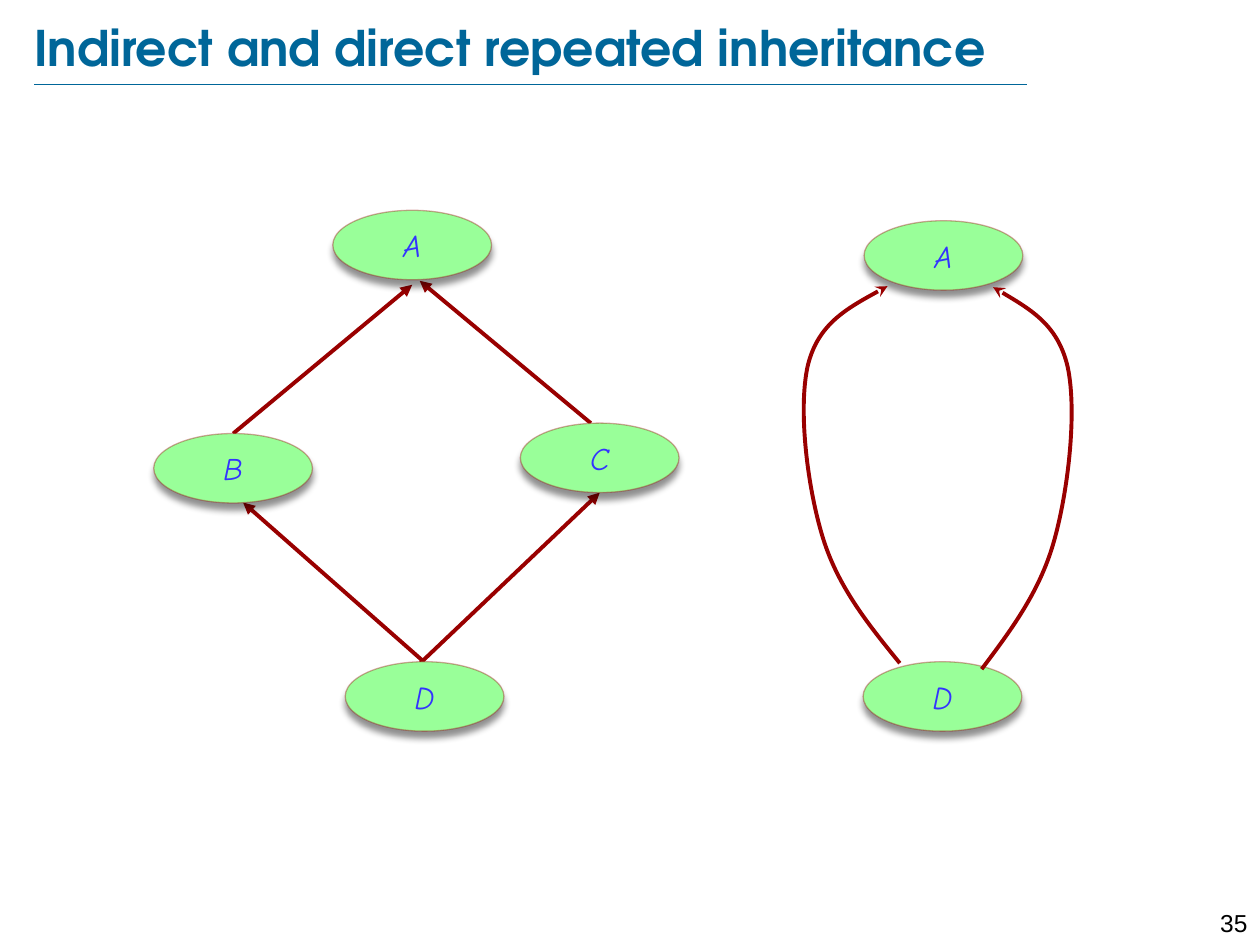
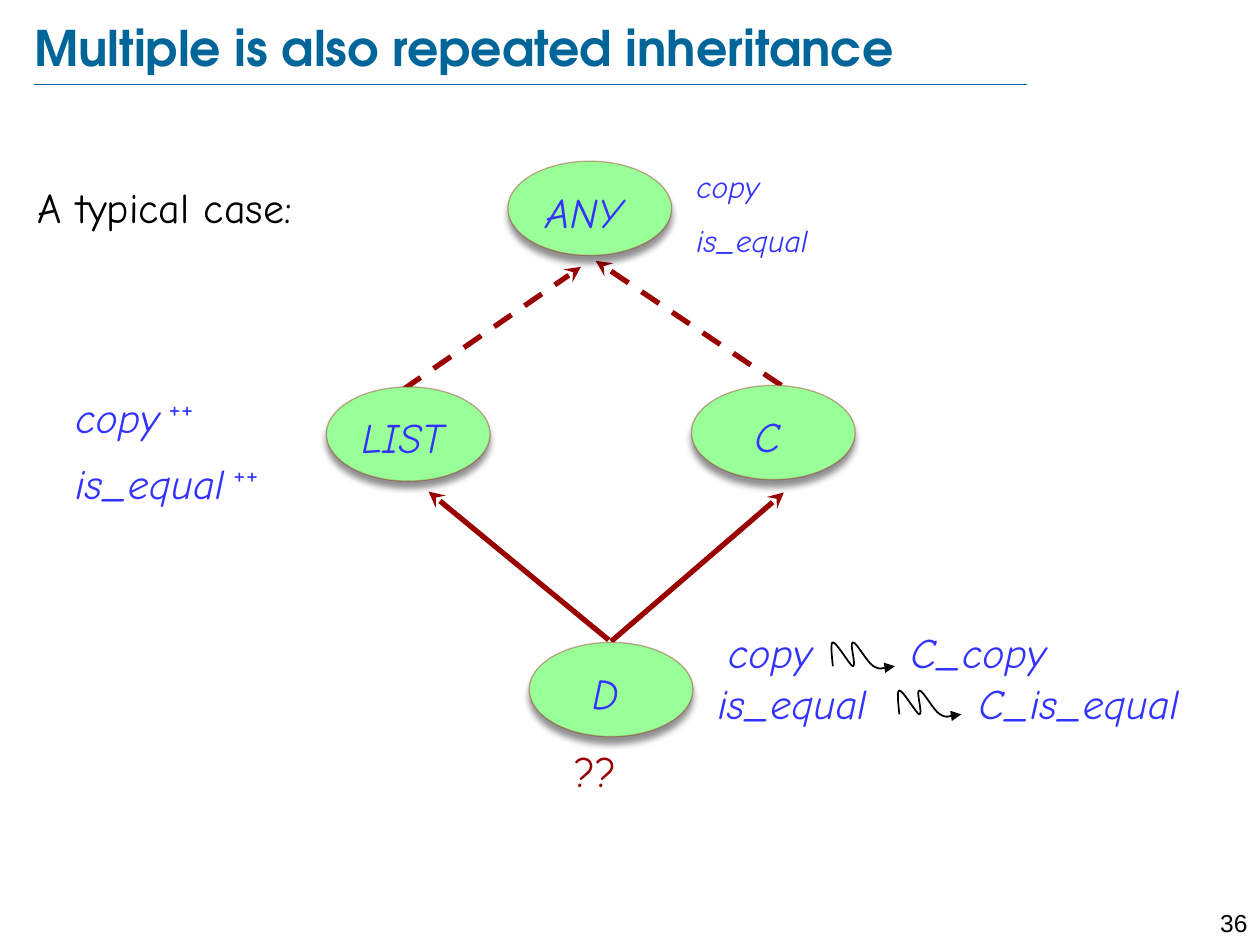
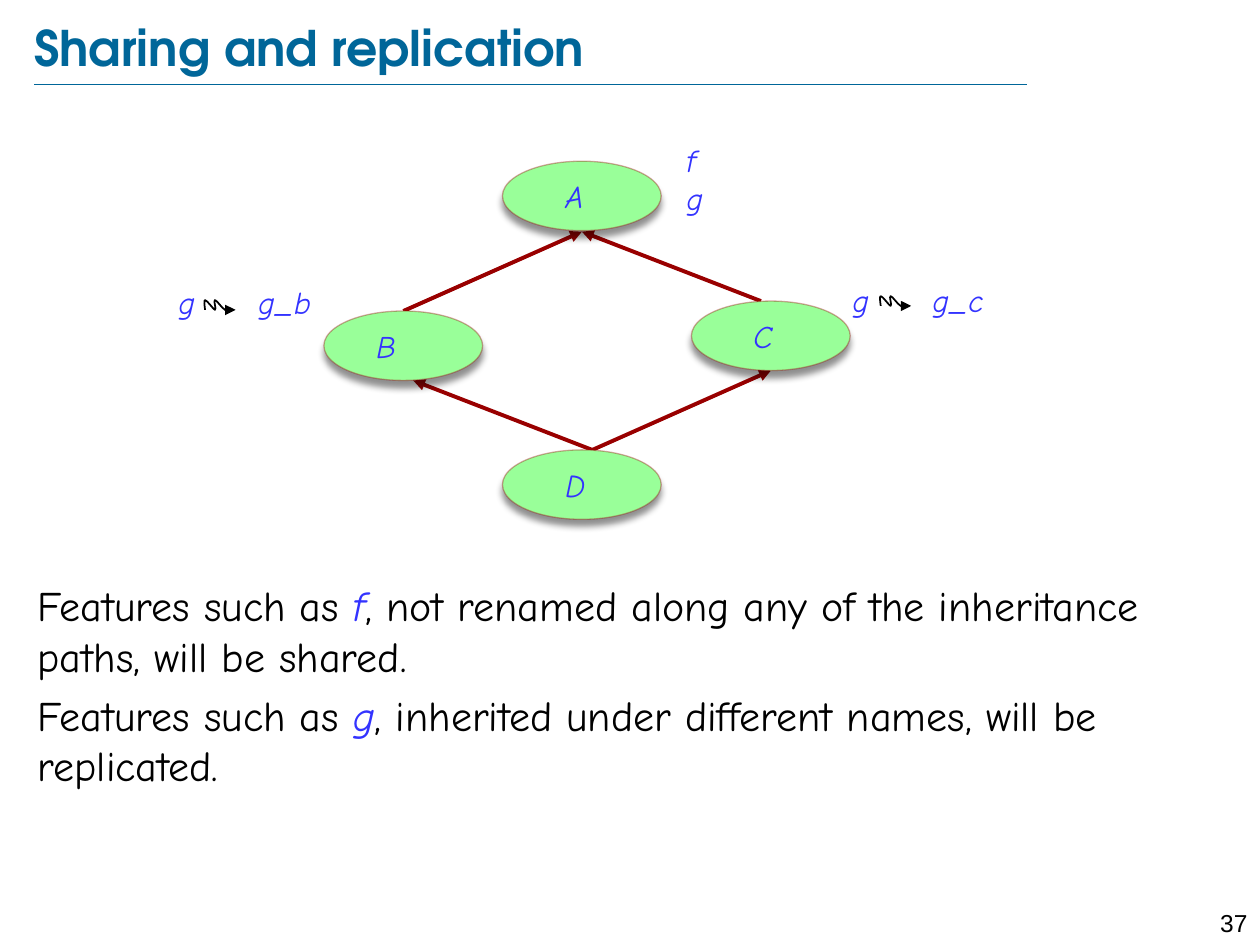
from lxml import etree
from pptx import Presentation
from pptx.dml.color import RGBColor
from pptx.enum.dml import MSO_LINE
from pptx.enum.shapes import MSO_CONNECTOR, MSO_SHAPE
from pptx.enum.text import MSO_ANCHOR, MSO_AUTO_SIZE, PP_ALIGN
from pptx.oxml import parse_xml
from pptx.oxml.ns import nsdecls, qn
from pptx.util import Cm, Pt

OVAL, STRAIGHT, DASH = MSO_SHAPE.OVAL, MSO_CONNECTOR.STRAIGHT, MSO_LINE.DASH
LEFT, CENTER, RIGHT = PP_ALIGN.LEFT, PP_ALIGN.CENTER, PP_ALIGN.RIGHT
TOP, MIDDLE = MSO_ANCHOR.TOP, MSO_ANCHOR.MIDDLE

# Shared look
TEAL, GREEN, RED, BLUE, BLACK = "006699", "99FF99", "990000", "3333FF", "000000"
TITLE_FONT, BODY_FONT, NUMBER_FONT = "TeX Gyre Adventor", "Comic Neue", "Arial"
FEATURE = dict(color=BLUE, italic=True)
SMALL_FEATURE = dict(size=18, **FEATURE)
FIRST_NUMBER = 35

# Curves in a unit box: a start point, then three points for each Bezier piece
BOW = [(1, 1), (.7, .9), (.4, .8), (.25, .67), (.1, .54), (0, .33), (.1, .21),
       (.2, .1), (.54, .05), (.88, 0)]
SQUIGGLE = [(.04, .86), (.02, .43), (0, 0), (.04, 0), (.1, 0), (.31, .86), (.35, .86),
            (.41, .86), (.29, 0), (.35, 0), (.41, 0), (.57, .73), (.67, .86),
            (.78, 1), (.94, .86), (1, .86)]
BOW_LINE = dict(color=RED, width=2.25, head="stealth")
RENAME_LINE = dict(color=BLACK, width=1, head="triangle")

# Content, in centimetres
# nodes: name, left, top, label offset; arrows: start, end; curves: points, box, flip, line
# texts: box, paragraphs (a string or a list of (text, format)), format
THICK = dict(width=3, head="stealth")
DASHED = dict(dash=DASH, **THICK)
THIN = dict(width=2.25, head="triangle")
SUPER = dict(size=28, italic=False, baseline=30)

SLIDES = [
    dict(
        title="Indirect and direct repeated inheritance", title_width=23.83,
        node_size=(3.2, 1.4),
        nodes=[("A", 6.71, 4.24, 0), ("D", 6.96, 13.34, 0), ("B", 3.1, 8.74, 0),
               ("C", 10.49, 8.53, 0), ("A", 17.42, 4.45, 0), ("D", 17.4, 13.34, 0)],
        arrows=[((4.7, 8.74), (8.31, 5.74), THIN), ((11.91, 8.53), (8.46, 5.66), THIN),
                ((8.48, 13.36), (12.09, 9.93), THIN), ((8.51, 13.31), (4.9, 10.13), THIN)],
        curves=[(BOW, (16.08, 5.77, 2.06, 7.6), False, BOW_LINE),
                (BOW, (19.79, 5.79, 1.93, 7.7), True, BOW_LINE)],
        texts=[],
    ),
    dict(
        title="Multiple is also repeated inheritance", title_width=23.6,
        node_size=(3.3, 1.9),
        label=dict(dy=.38, size=(4.47, 1.27), format=dict(align=CENTER, **FEATURE)),
        nodes=[("C", 13.94, 7.77, -.7), ("LIST", 6.58, 7.8, -.7),
               ("D", 10.67, 12.95, -.7), ("ANY", 10.24, 3.25, -.7)],
        arrows=[((8.13, 7.85), (11.71, 5.38), DASHED), ((15.75, 7.77), (12.01, 5.26), DASHED),
                ((12.32, 12.93), (15.8, 9.93), THICK), ((12.27, 12.9), (8.64, 9.91), THICK)],
        curves=[(SQUIGGLE, (16.74, 12.95, 1.3, .56), False, RENAME_LINE),
                (SQUIGGLE, (18.08, 13.92, 1.3, .56), False, RENAME_LINE)],
        texts=[
            ((.51, 3.53, 7.06, 2.16), ["A typical case:"], {}),
            ((1.27, 7.95, 5.03, 2.24),
             [[(name, {}), (" ", dict(size=16)), ("++", SUPER)] for name in ("copy", "is_equal")],
             dict(line_spacing=.7, gap=14, **FEATURE)),
            ((13.79, 3.25, 4.19, 2.16), ["copy", "is_equal"], dict(gap=9, **SMALL_FEATURE)),
            ((11.33, 14.91, 4.19, 1.27), ["??"], dict(color=RED)),
            ((14.43, 12.5, 9.04, 1.27), ["copy\tC_copy"], dict(tab=3.68, **FEATURE)),
            ((14.22, 13.54, 10.29, 1.27), ["is_equal\tC_is_equal"], dict(tab=5.26, **FEATURE)),
        ],
    ),
    dict(
        title="Sharing and replication", title_width=22.07,
        node_size=(3.2, 1.4),
        label=dict(dy=.2, size=(1.4, 1.02), format=SMALL_FEATURE),
        nodes=[("A", 10.13, 3.25, 1.02), ("D", 10.13, 9.07, 1.02),
               ("B", 6.53, 6.27, .81), ("C", 13.94, 6.07, 1)],
        arrows=[((8.13, 6.27), (11.73, 4.67), THIN), ((15.34, 6.07), (11.73, 4.67), THIN),
                ((11.94, 9.07), (15.54, 7.47), THIN), ((11.94, 9.07), (8.33, 7.67), THIN)],
        curves=[(SQUIGGLE, (4.11, 6.05, .64, .23), False, RENAME_LINE),
                (SQUIGGLE, (17.73, 5.97, .64, .23), False, RENAME_LINE)],
        texts=[
            ((.51, 11.56, 24.21, 6.17),
             [[("Features such as ", {}), ("f", FEATURE),
               (", not renamed along any of the inheritance paths, will be shared.", {})],
              [("Features such as ", {}), ("g", FEATURE),
               (", inherited under different names, will be replicated.", {})]],
             dict(gap=5)),
            ((13.59, 2.72, 4.19, 1.8), ["f", "g"], SMALL_FEATURE),
            ((3.35, 5.59, 3.23, 1.02), ["g\tg_b"], dict(tab=1.61, **SMALL_FEATURE)),
            ((16.94, 5.54, 3.23, 1.02), ["g\tg_c"], dict(tab=1.61, **SMALL_FEATURE)),
        ],
    ),
]


def rgb(color):
    return RGBColor.from_string(color)


def format_run(run, font=BODY_FONT, size=24, color=BLACK, bold=False, italic=False, baseline=0):
    run.font.name, run.font.size = font, Pt(size)
    run.font.bold, run.font.italic = bold, italic
    run.font.color.rgb = rgb(color)
    if baseline:
        run._r.get_or_add_rPr().set("baseline", str(baseline * 1000))


def write(frame, paragraphs, align=LEFT, anchor=TOP, wrap=True, gap=0, line_spacing=None,
          tab=None, **run_format):
    frame.auto_size = MSO_AUTO_SIZE.NONE
    frame.word_wrap, frame.vertical_anchor = wrap, anchor
    for index, runs in enumerate(paragraphs):
        paragraph = frame.add_paragraph() if index else frame.paragraphs[0]
        paragraph.alignment = align
        paragraph.space_before = Pt(gap if index else 0)
        if line_spacing:
            paragraph.line_spacing = line_spacing
        if tab:
            tabs = etree.SubElement(paragraph._p.get_or_add_pPr(), qn("a:tabLst"))
            etree.SubElement(tabs, qn("a:tab"), pos=str(Cm(tab)), algn="l")
        for text, changes in [(runs, {})] if isinstance(runs, str) else runs:
            run = paragraph.add_run()
            run.text = text
            format_run(run, **{**run_format, **changes})


def add_text(slide, box, paragraphs, **text_format):
    write(slide.shapes.add_textbox(*map(Cm, box)).text_frame, paragraphs, **text_format)


def style_line(shape, color=RED, width=1, head=None, dash=None):
    shape.line.color.rgb, shape.line.width = rgb(color), Pt(width)
    if dash:
        shape.line.dash_style = dash
    if head:
        etree.SubElement(shape.line._get_or_add_ln(), qn("a:tailEnd"), type=head)


def add_line(slide, start, end, **line_format):
    line = slide.shapes.add_connector(STRAIGHT, *map(Cm, start + end))
    style_line(line, **line_format)
    etree.SubElement(line._element.spPr, qn("a:effectLst"))


def add_curve(slide, unit_points, box, flip, line_format):
    left, top, width, height = box
    points = [(Cm(left + width * (1 - x if flip else x)), Cm(top + height * y))
              for x, y in unit_points]
    builder = slide.shapes.build_freeform(*points[0])
    builder.add_line_segments(points[1:], close=False)
    curve = builder.convert_to_shape()
    curve.shadow.inherit = False
    curve.fill.background()
    style_line(curve, **line_format)
    # Merge each three straight pieces into one Bezier piece
    outline = curve._element.find(".//" + qn("a:path"))
    pieces = outline.findall(qn("a:lnTo"))
    for first in range(0, len(pieces), 3):
        bezier = etree.SubElement(outline, qn("a:cubicBezTo"))
        for piece in pieces[first:first + 3]:
            bezier.append(piece[0])
            outline.remove(piece)


def add_node(slide, left, top, size):
    node = slide.shapes.add_shape(OVAL, *map(Cm, (left, top, *size)))
    node.fill.solid()
    node.fill.fore_color.rgb = rgb(GREEN)
    style_line(node, RED, .75)
    line_color = node.line._get_or_add_ln().find(".//" + qn("a:srgbClr"))
    etree.SubElement(line_color, qn("a:alpha"), val="34000")
    node._element.spPr.append(parse_xml(
        f'<a:effectLst {nsdecls("a")}><a:outerShdw blurRad="{Pt(4)}" dist="{Pt(4)}" '
        f'dir="5400000" rotWithShape="0"><a:srgbClr val="{BLACK}"><a:alpha val="43000"/>'
        '</a:srgbClr></a:outerShdw></a:effectLst>'))
    return node


def add_frame(slide, title, title_width, number):
    heading = slide.shapes.title
    heading.left, heading.top, heading.width, heading.height = map(Cm, (.69, .33, title_width, 1.22))
    frame = heading.text_frame
    frame.margin_left = frame.margin_right = frame.margin_top = frame.margin_bottom = 0
    write(frame, [title], anchor=MIDDLE, font=TITLE_FONT, size=28, color=TEAL, bold=True)
    add_line(slide, (.69, 1.7), (20.7, 1.7), color=TEAL, width=.25)
    add_text(slide, (24, 18.19, 1.4, .61), [str(number)], align=RIGHT, font=NUMBER_FONT, size=14)


def build_slide(slide, content, number):
    add_frame(slide, content["title"], content["title_width"], number)
    for start, end, line_format in content["arrows"]:
        add_line(slide, start, end, **line_format)
    # Classes, with the name inside or in a label of its own
    label = content.get("label")
    for name, left, top, label_dx in content["nodes"]:
        node = add_node(slide, left, top, content["node_size"])
        if label:
            add_text(slide, (left + label_dx, top + label["dy"], *label["size"]), [name],
                     **label["format"])
        else:
            write(node.text_frame, [name], align=CENTER, anchor=MIDDLE, wrap=False,
                  **SMALL_FEATURE)
    for box, paragraphs, text_format in content["texts"]:
        add_text(slide, box, paragraphs, **text_format)
    for curve in content["curves"]:
        add_curve(slide, *curve)


def main():
    deck = Presentation()
    deck.slide_width, deck.slide_height = Cm(25.4), Cm(19.05)
    title_only = deck.slide_layouts[5]
    for number, content in enumerate(SLIDES, FIRST_NUMBER):
        build_slide(deck.slides.add_slide(title_only), content, number)
    deck.save("out.pptx")


if __name__ == "__main__":
    main()
